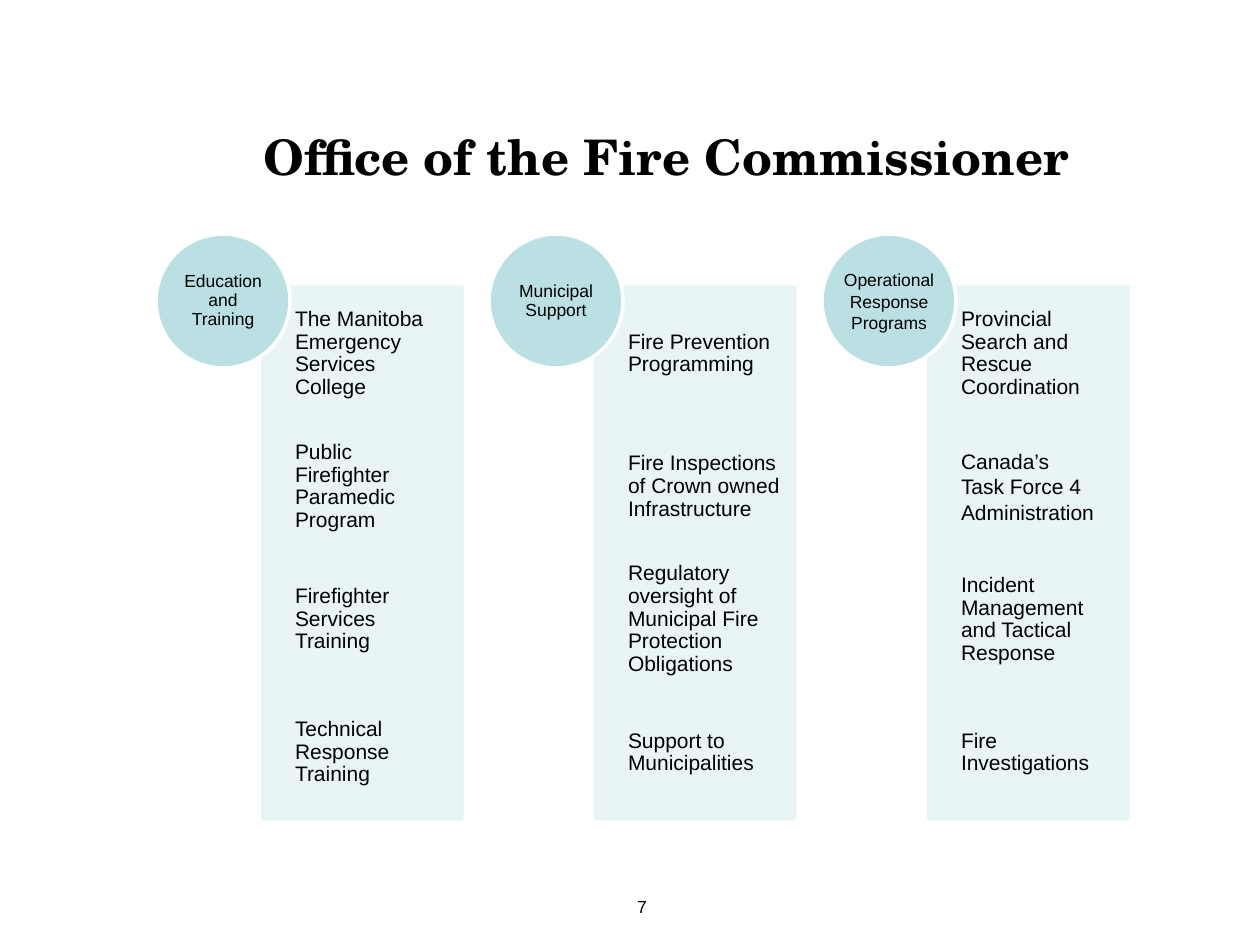
"""Build the Office of the Fire Commissioner programs slide."""
from dataclasses import dataclass

from lxml.etree import SubElement
from pptx import Presentation
from pptx.dml.color import RGBColor
from pptx.enum.shapes import MSO_SHAPE as Shape
from pptx.enum.text import MSO_ANCHOR as Anchor, PP_ALIGN as Align
from pptx.oxml.ns import qn
from pptx.util import Emu, Pt

EMU_PER_PX = 914400 / 126


@dataclass(frozen=True)
class Theme:
    text: str = "000000"
    card: str = "E7F3F4"
    circle: str = "BBE0E3"
    outline: str = "FFFFFF"
    card_opacity: int = 90
    line_width: int = 2
    title_font: str = "TeX Gyre Schola"
    body_font: str = "Arial"
    title_size: int = 28
    item_size: int = 12
    label_size: int = 10


@dataclass(frozen=True)
class Box:
    left: int
    top: int
    width: int
    height: int

    def emu(self) -> list[Emu]:
        return [px(value) for value in (self.left, self.top, self.width, self.height)]


@dataclass(frozen=True)
class TextStyle:
    size: int
    font: str = Theme.body_font
    bold: bool = False
    align: Align = Align.LEFT
    insets: tuple[int, int, int, int] = (0, 0, 0, 0)


@dataclass(frozen=True)
class Program:
    label: tuple[str, ...]
    items: tuple[tuple[str, ...], ...]


THEME = Theme()
TITLE = TextStyle(THEME.title_size, THEME.title_font, True, Align.CENTER, (13, 6, 13, 6))
LABEL = TextStyle(THEME.label_size, align=Align.CENTER)
ITEM = TextStyle(THEME.item_size, insets=(0, 11, 11, 11))

COLUMN_LEFT, COLUMN_PITCH = 263, 333
CARD_TOP, CARD_WIDTH, CARD_HEIGHT, CARD_INDENT = 287, 199, 133, 32
CIRCLE_OFFSET, CIRCLE_TOP, CIRCLE_SIZE, CIRCLE_MARGIN = -107, 234, 134, 20

PROGRAMS = (
    Program(("Education and Training",), (
        ("The Manitoba Emergency Services College",),
        ("Public Firefighter Paramedic Program",),
        ("Firefighter Services Training",),
        ("Technical Response Training",),
    )),
    Program(("Municipal Support",), (
        ("Fire Prevention Programming",),
        ("Fire Inspections of Crown owned Infrastructure",),
        ("Regulatory oversight of Municipal Fire Protection Obligations",),
        ("Support to Municipalities",),
    )),
    Program(("Operational", "Response Programs"), (
        ("Provincial Search and Rescue Coordination",),
        ("Canada’s", "Task Force 4 Administration"),
        ("Incident Management and Tactical Response",),
        ("Fire Investigations",),
    )),
)


def px(value: int) -> Emu:
    """Turn pixels into EMU."""
    return Emu(round(value * EMU_PER_PX))


def apply(target, values: dict) -> None:
    """Set every named attribute on the target."""
    for name, value in values.items():
        setattr(target, name, value)


def add_text(slide, box: Box, lines: tuple[str, ...], style: TextStyle) -> None:
    """Add a wrapped, vertically centred text box; single paragraphs are set tight."""
    frame = slide.shapes.add_textbox(*box.emu()).text_frame
    left, top, right, bottom = map(px, style.insets)
    apply(frame, {
        "word_wrap": True, "vertical_anchor": Anchor.MIDDLE,
        "margin_left": left, "margin_top": top,
        "margin_right": right, "margin_bottom": bottom,
    })
    frame.text = "\n".join(lines)
    tight = len(lines) == 1 and style is not TITLE
    for paragraph in frame.paragraphs:
        apply(paragraph, {"alignment": style.align, "line_spacing": 0.9 if tight else 1.0})
        apply(paragraph.font, {"size": Pt(style.size), "name": style.font, "bold": style.bold})
        paragraph.font.color.rgb = RGBColor.from_string(THEME.text)


def add_panel(slide, kind: Shape, box: Box, fill: str, line: str, opacity: int = 100) -> None:
    """Add a filled and outlined shape with the given opacity."""
    shape = slide.shapes.add_shape(kind, *box.emu())
    shape.shadow.inherit = False
    shape.fill.solid()
    shape.fill.fore_color.rgb = RGBColor.from_string(fill)
    shape.line.color.rgb = RGBColor.from_string(line)
    shape.line.width = Pt(THEME.line_width)
    if opacity < 100:
        for color in shape.element.spPr.iter(qn("a:srgbClr")):
            SubElement(color, qn("a:alpha"), val=str(opacity * 1000))


def add_program(slide, left: int, program: Program) -> None:
    """Add a column of cards with its circular label."""
    for row, lines in enumerate(program.items):
        top = CARD_TOP + row * CARD_HEIGHT
        card = Box(left, top, CARD_WIDTH, CARD_HEIGHT)
        body = Box(left + CARD_INDENT, top, CARD_WIDTH - CARD_INDENT, CARD_HEIGHT)
        add_panel(slide, Shape.RECTANGLE, card, THEME.card, THEME.card, THEME.card_opacity)
        add_text(slide, body, lines, ITEM)
    circle_left = left + CIRCLE_OFFSET
    circle = Box(circle_left, CIRCLE_TOP, CIRCLE_SIZE, CIRCLE_SIZE)
    label_size = CIRCLE_SIZE - 2 * CIRCLE_MARGIN
    label = Box(circle_left + CIRCLE_MARGIN, CIRCLE_TOP + CIRCLE_MARGIN, label_size, label_size)
    add_panel(slide, Shape.OVAL, circle, THEME.circle, THEME.outline)
    add_text(slide, label, program.label, LABEL)


def main() -> None:
    """Create and save the presentation."""
    presentation = Presentation()
    apply(presentation, {"slide_width": px(1260), "slide_height": px(945)})
    slide = presentation.slides.add_slide(presentation.slide_layouts[6])
    add_text(slide, Box(113, 77, 1106, 158), ("Office of the Fire Commissioner",), TITLE)
    add_text(slide, Box(618, 891, 48, 33), ("7",), LABEL)
    for column, program in enumerate(PROGRAMS):
        add_program(slide, COLUMN_LEFT + column * COLUMN_PITCH, program)
    presentation.save("out.pptx")


if __name__ == "__main__":
    main()
